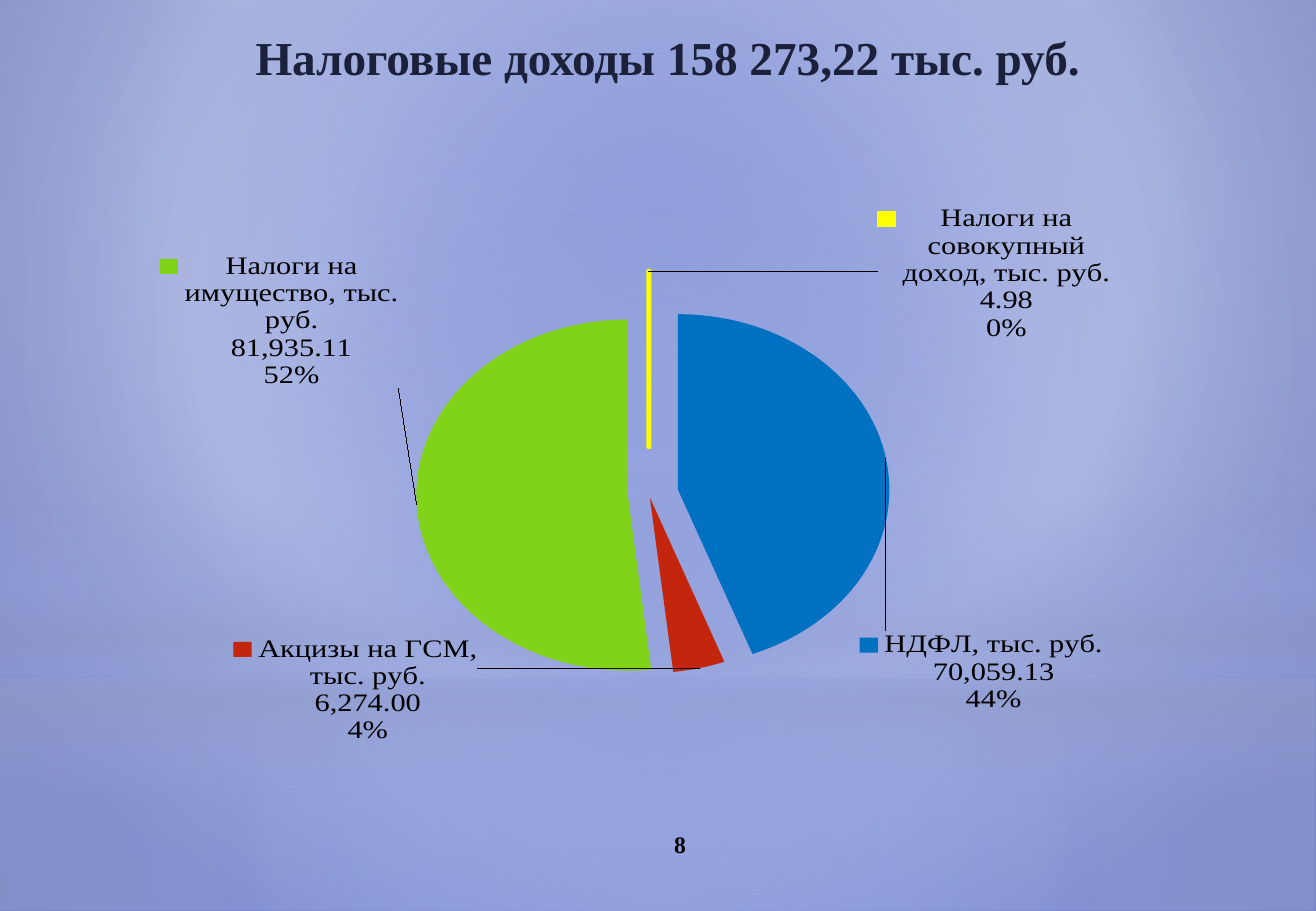
from lxml import etree
from pptx import Presentation
from pptx.chart.data import CategoryChartData
from pptx.dml.color import RGBColor
from pptx.enum.chart import XL_CHART_TYPE
from pptx.enum.shapes import MSO_SHAPE
from pptx.enum.text import MSO_ANCHOR, PP_ALIGN
from pptx.oxml import parse_xml
from pptx.oxml.ns import nsdecls, qn
from pptx.util import Cm, Pt

PIE = XL_CHART_TYPE.PIE
RECT, OVAL = MSO_SHAPE.RECTANGLE, MSO_SHAPE.OVAL
MIDDLE, CENTER = MSO_ANCHOR.MIDDLE, PP_ALIGN.CENTER

BLACK = RGBColor(0x00, 0x00, 0x00)
NAVY = RGBColor(0x1C, 0x21, 0x3B)
BLUE = RGBColor(0x00, 0x70, 0xC0)
RED = RGBColor(0xC3, 0x26, 0x0C)
GREEN = RGBColor(0x81, 0xD3, 0x1A)
YELLOW = RGBColor(0xFF, 0xFF, 0x00)
SKY = RGBColor(0x94, 0xA3, 0xDE)
HAZE = RGBColor(0x90, 0x9A, 0xCA)
BACK_START = RGBColor(0x7D, 0x8B, 0xD2)
BACK_MIDDLE = RGBColor(0xDE, 0xE1, 0xF2)
BACK_END = RGBColor(0x55, 0x68, 0xC5)

WIDTH, HEIGHT = 27.51, 19.05
HORIZON = 14.17
CENTERED = (50, 50, 50, 50)

# Category, value, colour, explosion in percent, label shift as share of the chart
TAXES = [
    ("НДФЛ, тыс. руб.", 70059.13, BLUE, 14, (-0.03, 0.47)),
    ("Акцизы на ГСМ, тыс. руб.", 6274, RED, 2, (-0.42, -0.06)),
    ("Налоги на имущество, тыс. руб.", 81935.11, GREEN, 10, (-0.01, -0.34)),
    ("Налоги на совокупный доход, тыс. руб.", 4.98, YELLOW, 27, (0.31, 0.14)),
]
MAX_EXPLOSION = max(tax[3] for tax in TAXES)


class SlideBuilder:
    font = "Times New Roman"

    def __init__(self, presentation):
        self.slide = presentation.slides.add_slide(presentation.slide_layouts[6])

    def gradient(self, fill, owner, stops, focus=None, angle=90):
        """Stops are (position, colour, opacity) in percent."""
        fill.gradient()
        grad = owner.find(".//" + qn("a:gradFill"))
        for child in list(grad):
            grad.remove(child)
        stop_list = etree.SubElement(grad, qn("a:gsLst"))
        for position, color, opacity in stops:
            stop = etree.SubElement(stop_list, qn("a:gs"), pos=str(position * 1000))
            tint = etree.SubElement(stop, qn("a:srgbClr"), val=str(color))
            etree.SubElement(tint, qn("a:alpha"), val=str(opacity * 1000))
        if focus:
            path = etree.SubElement(grad, qn("a:path"), path="circle")
            sides = {side: str(share * 1000) for side, share in zip("ltrb", focus)}
            etree.SubElement(path, qn("a:fillToRect"), **sides)
        else:
            etree.SubElement(grad, qn("a:lin"), ang=str(angle * 60000), scaled="0")

    def background(self, stops, focus):
        self.gradient(self.slide.background.fill, self.slide.element, stops, focus)

    def glow(self, kind, top, height, stops, focus=None):
        shape = self.slide.shapes.add_shape(kind, 0, Cm(top), Cm(WIDTH), Cm(height))
        shape.shadow.inherit = False
        shape.line.fill.background()
        self.gradient(shape.fill, shape.element, stops, focus)

    def text(self, words, left, top, width, height, size, color):
        box = self.slide.shapes.add_textbox(Cm(left), Cm(top), Cm(width), Cm(height))
        frame = box.text_frame
        frame.word_wrap = True
        frame.vertical_anchor = MIDDLE
        paragraph = frame.paragraphs[0]
        paragraph.alignment = CENTER
        run = paragraph.add_run()
        run.text = words
        run.font.name, run.font.size, run.font.bold = self.font, Pt(size), True
        run.font.color.rgb = color

    def pie(self, taxes, left, top, width, height, plot_area):
        data = CategoryChartData(number_format="#,##0.00")
        data.categories = [tax[0] for tax in taxes]
        data.add_series("Series 1", [tax[1] for tax in taxes])
        chart = self.slide.shapes.add_chart(
            PIE, Cm(left), Cm(top), Cm(width), Cm(height), data).chart
        chart.has_legend = chart.has_title = False
        chart.font.name, chart.font.size = self.font, Pt(18)
        chart.font.color.rgb = BLACK
        chart.plots[0].vary_by_categories = True
        self.place_plot(chart, plot_area)

        # Slices
        series = chart.plots[0].series[0]
        for index, (_, _, color, _, _) in enumerate(taxes):
            look = series.points[index].format
            look.fill.solid()
            look.fill.fore_color.rgb = color
            if color == YELLOW:
                look.line.color.rgb = color
                look.line.width = Pt(3)
            else:
                look.line.fill.background()
        ser = chart.element.find(".//" + qn("c:ser"))
        slices = ser.findall(qn("c:dPt"))
        slices[0].addprevious(self.explosion(MAX_EXPLOSION))
        for slice_xml, tax in zip(slices, taxes):
            slice_xml.find(qn("c:spPr")).addprevious(self.explosion(tax[3]))

        ser.find(qn("c:cat")).addprevious(self.labels([tax[4] for tax in taxes]))

    def explosion(self, percent):
        return etree.Element(qn("c:explosion"), val=str(percent))

    def place_plot(self, chart, plot_area):
        area = chart.element.find(".//" + qn("c:plotArea"))
        for old in area.findall(qn("c:layout")):
            area.remove(old)
        x, y, w, h = plot_area
        area.insert(0, parse_xml(
            f'<c:layout {nsdecls("c")}><c:manualLayout><c:layoutTarget val="inner"/>'
            '<c:xMode val="edge"/><c:yMode val="edge"/>'
            f'<c:x val="{x}"/><c:y val="{y}"/><c:w val="{w}"/><c:h val="{h}"/>'
            '</c:manualLayout></c:layout>'))

    def labels(self, shifts):
        content = (
            '<c:dLblPos val="outEnd"/><c:showLegendKey val="1"/><c:showVal val="1"/>'
            '<c:showCatName val="1"/><c:showSerName val="0"/><c:showPercent val="1"/>'
            '<c:showBubbleSize val="0"/><c:separator>\n</c:separator>')
        moved = "".join(
            f'<c:dLbl><c:idx val="{index}"/><c:layout><c:manualLayout><c:x val="{x}"/>'
            f'<c:y val="{y}"/></c:manualLayout></c:layout>{content}</c:dLbl>'
            for index, (x, y) in enumerate(shifts))
        return parse_xml(f'<c:dLbls {nsdecls("c")}>{moved}{content}'
                         '<c:showLeaderLines val="1"/></c:dLbls>')


def main():
    presentation = Presentation()
    presentation.slide_width, presentation.slide_height = Cm(WIDTH), Cm(HEIGHT)
    builder = SlideBuilder(presentation)

    # Backdrop
    builder.background([(0, BACK_START, 100), (60, BACK_MIDDLE, 100),
                        (100, BACK_END, 100)], (20, 10, 20, 60))
    builder.glow(RECT, HORIZON, HEIGHT - HORIZON,
                 [(0, SKY, 91), (37, SKY, 76), (100, HAZE, 79)], CENTERED)
    builder.glow(RECT, 0, HORIZON,
                 [(0, SKY, 89), (48, SKY, 62), (100, HAZE, 79)], CENTERED)
    builder.glow(RECT, 10.46, 6.35,
                 [(0, SKY, 0), (29, SKY, 30), (45, HAZE, 40),
                  (55, SKY, 26), (65, HAZE, 60), (100, SKY, 0)])
    builder.glow(OVAL, 4.45, HORIZON, [(0, SKY, 100), (56, SKY, 0)], CENTERED)

    # Title and page number
    builder.text("Налоговые доходы 158 273,22 тыс. руб.",
                 1.57, 0.4, 24.77, 1.57, 28, NAVY)
    builder.text("8", 11.46, 17.15, 5.51, 1.02, 14, BLACK)

    # Tax revenue chart
    builder.pie(TAXES, 1.93, 2.69, 23.27, 13.69, (0.08, 0.13, 0.84, 0.82))

    presentation.save("out.pptx")


if __name__ == "__main__":
    main()
